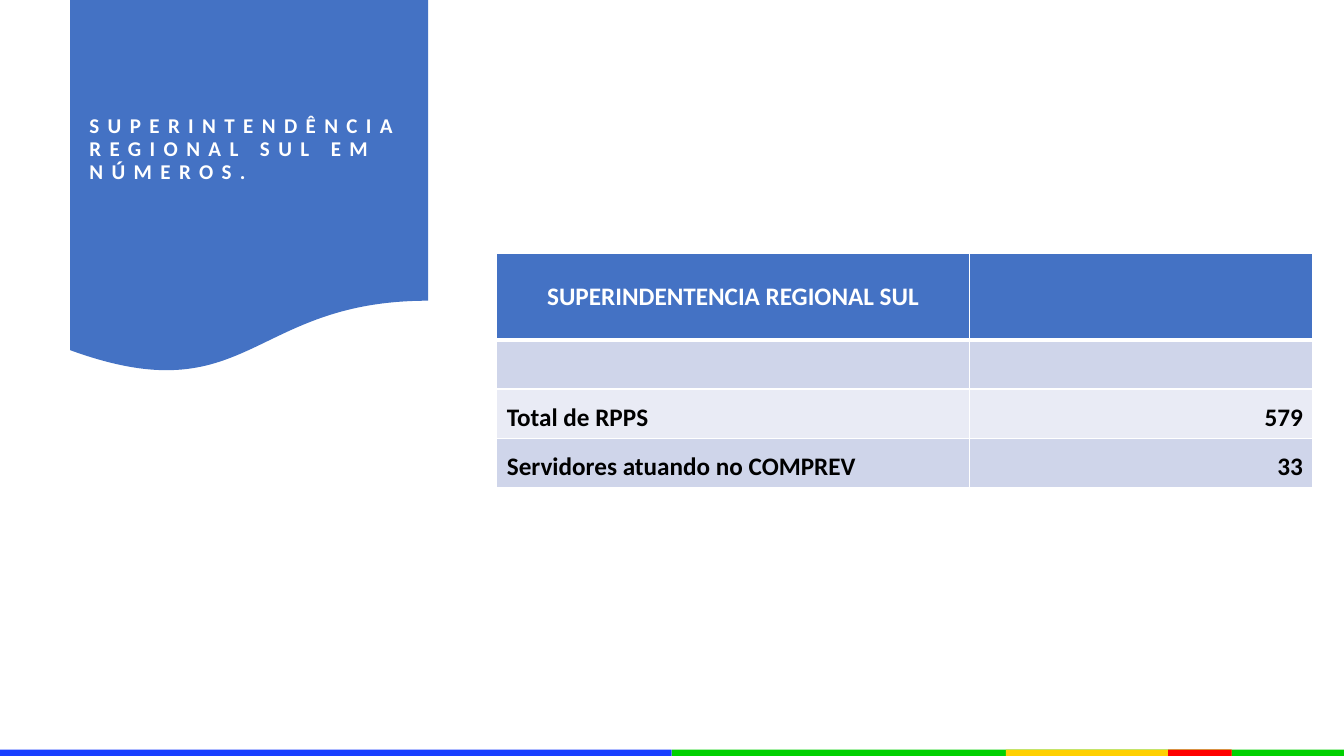
import pptx
import pptx.dml.color
import pptx.enum.shapes
import pptx.enum.text
import pptx.oxml
import pptx.oxml.ns
import pptx.util

Cm, Pt = pptx.util.Cm, pptx.util.Pt
SHAPE = pptx.enum.shapes.MSO_SHAPE
ANCHOR = pptx.enum.text.MSO_ANCHOR
ALIGN = pptx.enum.text.PP_ALIGN

TITLE = "SUPERINTENDÊNCIA REGIONAL SUL EM NÚMEROS."
TABLE_ROWS = [
    ("SUPERINDENTENCIA REGIONAL SUL", ""),
    ("", ""),
    ("Total de RPPS", "579"),
    ("Servidores atuando no COMPREV", "33"),
]
COLUMN_WIDTHS = (11.91, 8.66)
ROW_HEIGHTS = (2.18, 1.24, 1.24, 1.24)

FONT = "Calibri"
BLUE, WHITE, BLACK = "4472C4", "FFFFFF", "000000"
BAND_FILLS = ("E9EBF5", "CFD5EA")

# Footer stripes: left, width, colour
STRIPES = [
    (0, 16.93, "183EFF"),
    (16.93, 16.94, "00D000"),
    (25.35, 5.69, "FFD000"),
    (29.44, 1.6, "FF0000"),
]
STRIPE_TOP, STRIPE_HEIGHT = 18.89, 0.16


def color(hex_value):
    return pptx.dml.color.RGBColor.from_string(hex_value)


def add_block(slide, preset, left, top, width, height, fill):
    block = slide.shapes.add_shape(preset, Cm(left), Cm(top), Cm(width), Cm(height))
    block.shadow.inherit = False
    block.fill.solid()
    block.fill.fore_color.rgb = color(fill)
    block.line.fill.background()


def format_runs(paragraph, size, fill):
    for run in paragraph.runs:
        run.font.name = FONT
        run.font.size = Pt(size)
        run.font.bold = True
        run.font.color.rgb = color(fill)


def add_borders(cell, bottom_width):
    """Draw white cell borders; call before the fill, which must follow them."""
    widths = {"L": 1, "R": 1, "T": 1, "B": bottom_width}
    for side, width in widths.items():
        cell._tc.get_or_add_tcPr().append(pptx.oxml.parse_xml(
            f'<a:ln{side} {pptx.oxml.ns.nsdecls("a")} w="{Pt(width)}">'
            f'<a:solidFill><a:srgbClr val="{WHITE}"/></a:solidFill></a:ln{side}>'))


def add_title(slide):
    title = slide.shapes.title
    slide.shapes._spTree.append(title._element)  # in front of the banner
    title.left, title.top, title.width, title.height = Cm(2), Cm(0.48), Cm(8.53), Cm(6.58)
    frame = title.text_frame
    frame.text = TITLE
    frame.word_wrap = True
    frame.auto_size = pptx.enum.text.MSO_AUTO_SIZE.NONE
    frame.vertical_anchor = ANCHOR.MIDDLE
    heading = frame.paragraphs[0]
    heading.alignment = ALIGN.LEFT
    heading.line_spacing = 0.9
    format_runs(heading, 15, WHITE)
    heading.runs[0].font._element.set("spc", "600")


def add_numbers_table(slide):
    numbers = slide.shapes.add_table(
        len(TABLE_ROWS), len(COLUMN_WIDTHS), Cm(12.52), Cm(6.38),
        Cm(sum(COLUMN_WIDTHS)), Cm(sum(ROW_HEIGHTS))).table
    for column, width in zip(numbers.columns, COLUMN_WIDTHS):
        column.width = Cm(width)
    for r, (row, height) in enumerate(zip(TABLE_ROWS, ROW_HEIGHTS)):
        numbers.rows[r].height = Cm(height)
        header = r == 0
        for c, entry in enumerate(row):
            cell = numbers.cell(r, c)
            add_borders(cell, 3 if header else 1)
            cell.fill.solid()
            cell.fill.fore_color.rgb = color(BLUE if header else BAND_FILLS[r % 2])
            cell.vertical_anchor = ANCHOR.MIDDLE if header else ANCHOR.BOTTOM
            cell.text_frame.text = entry
            paragraph = cell.text_frame.paragraphs[0]
            paragraph.alignment = ALIGN.CENTER if header else (ALIGN.LEFT, ALIGN.RIGHT)[c]
            format_runs(paragraph, 18, WHITE if header else BLACK)


def main():
    deck = pptx.Presentation()
    deck.slide_width, deck.slide_height = Cm(33.87), Cm(19.05)
    slide = deck.slides.add_slide(deck.slide_layouts[5])
    for left, width, fill in STRIPES:
        add_block(slide, SHAPE.RECTANGLE, left, STRIPE_TOP, width, STRIPE_HEIGHT, fill)
    add_block(slide, SHAPE.FLOWCHART_DOCUMENT, 1.77, 0, 9.02, 9.45, BLUE)
    add_title(slide)
    add_numbers_table(slide)
    deck.save("out.pptx")


if __name__ == "__main__":
    main()
